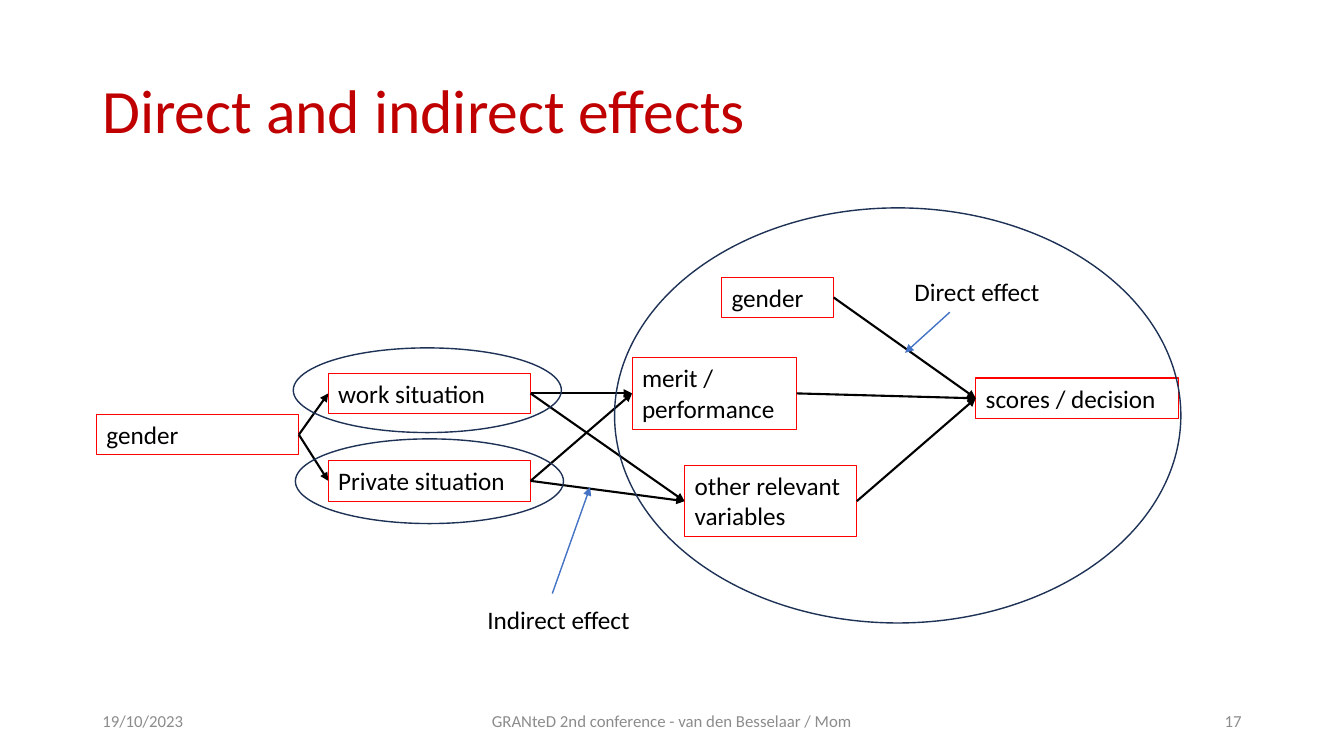
from lxml import etree
from pptx import Presentation
from pptx import util as u
from pptx.dml import color
from pptx.enum import shapes, text
from pptx.oxml import ns

RED, BLACK, GREY = "FF0000", "000000", "8C8C8C"
TITLE_RED, BLUE, NAVY = "C00000", "4472C4", "1E3256"
LEFT_SIDE, RIGHT_SIDE = 1, 3  # connection sites of a rectangle

NODES = {
    "scores": ("scores / decision", (697, 270, 144.5, 29)),
    "direct gender": ("gender", (515.5, 198, 80, 29)),
    "merit": ("merit / performance", (451.5, 255.5, 117.5, 51)),
    "other": ("other relevant variables", (489, 332.5, 123, 51)),
    "gender": ("gender", (69, 296, 144.5, 29)),
    "work": ("work situation", (234.5, 266.5, 144.5, 29)),
    "private": ("Private situation", (234.5, 329, 144.5, 29)),
}
LINKS = {
    "direct gender": ["scores"],
    "merit": ["scores"],
    "other": ["scores"],
    "gender": ["work", "private"],
    "work": ["merit", "other"],
    "private": ["merit", "other"],
}
LABELS = [
    ("Direct effect", (646, 194, 123, 29)),
    ("Indirect effect", (341, 428, 123, 29)),
]
POINTERS = [(678.5, 223, 646.5, 252), (394.5, 424, 421.5, 348)]
ELLIPSES = [
    (209.5, 248.5, 191.5, 60.5),
    (211, 313.5, 191.5, 60.5),
    (439, 148.5, 404.5, 296.5),
]
FOOTERS = [
    ("19/10/2023", (66, 500.5, 216, 29), text.PP_ALIGN.LEFT),
    ("GRANteD 2nd conference - van den Besselaar / Mom", (318, 500.5, 324, 29),
     text.PP_ALIGN.CENTER),
    ("17", (678, 500.5, 216, 29), text.PP_ALIGN.RIGHT),
]


def rgb(value):
    return color.RGBColor.from_string(value)


def points(values):
    return [u.Pt(value) for value in values]


def set_all(target, values):
    for name, value in values.items():
        setattr(target, name, value)


def write(box, words, size=18, colour=BLACK, anchor=text.MSO_ANCHOR.TOP,
          align=text.PP_ALIGN.LEFT, spacing=1.0):
    set_all(box.text_frame, {"word_wrap": True, "vertical_anchor": anchor})
    para = box.text_frame.paragraphs[0]
    set_all(para, {"alignment": align, "line_spacing": spacing})
    span = para.add_run()
    span.text = words
    set_all(span.font, {"name": "Calibri", "size": u.Pt(size)})
    span.font.color.rgb = rgb(colour)


def add_label(page, words, place, **style):
    write(page.shapes.add_textbox(*points(place)), words, **style)


def set_line(shape, colour, width):
    shape.line.color.rgb = rgb(colour)
    shape.line.width = u.Pt(width)


def add_outline(page, kind, place, colour, width):
    """Add an unfilled preset shape."""
    shape = page.shapes.add_shape(kind, *points(place))
    shape.shadow.inherit = False
    shape.fill.background()
    set_line(shape, colour, width)
    return shape


def add_node(page, words, place):
    node = add_outline(page, shapes.MSO_SHAPE.RECTANGLE, place, RED, 0.75)
    write(node, words)
    return node


def add_arrow(page, ends, colour, width):
    arrow = page.shapes.add_connector(shapes.MSO_CONNECTOR.STRAIGHT, *points(ends))
    set_line(arrow, colour, width)
    head = etree.SubElement(arrow.line._get_or_add_ln(), ns.qn("a:tailEnd"))
    head.set("type", "triangle")
    etree.SubElement(arrow._element.spPr, ns.qn("a:effectLst"))
    return arrow


def link(page, source, target):
    """Join the right side of one node to the left side of another."""
    arrow = add_arrow(page, (0, 0, 0, 0), BLACK, 1.5)
    arrow.begin_connect(source, RIGHT_SIDE)
    arrow.end_connect(target, LEFT_SIDE)


def main():
    deck = Presentation()
    set_all(deck, {"slide_width": u.Pt(960), "slide_height": u.Pt(540)})
    page = deck.slides.add_slide(deck.slide_layouts[6])

    middle = text.MSO_ANCHOR.MIDDLE
    add_label(page, "Direct and indirect effects", (66, 29, 828, 104.5),
              size=44, colour=TITLE_RED, anchor=middle, spacing=0.9)
    for words, place, align in FOOTERS:
        add_label(page, words, place, size=12, colour=GREY, anchor=middle, align=align)

    nodes = {name: add_node(page, *node) for name, node in NODES.items()}
    for source, targets in LINKS.items():
        for target in targets:
            link(page, nodes[source], nodes[target])

    for words, place in LABELS:
        add_label(page, words, place)
    for ends in POINTERS:
        add_arrow(page, ends, BLUE, 1)
    for place in ELLIPSES:
        add_outline(page, shapes.MSO_SHAPE.OVAL, place, NAVY, 1)

    deck.save("out.pptx")


if __name__ == "__main__":
    main()
